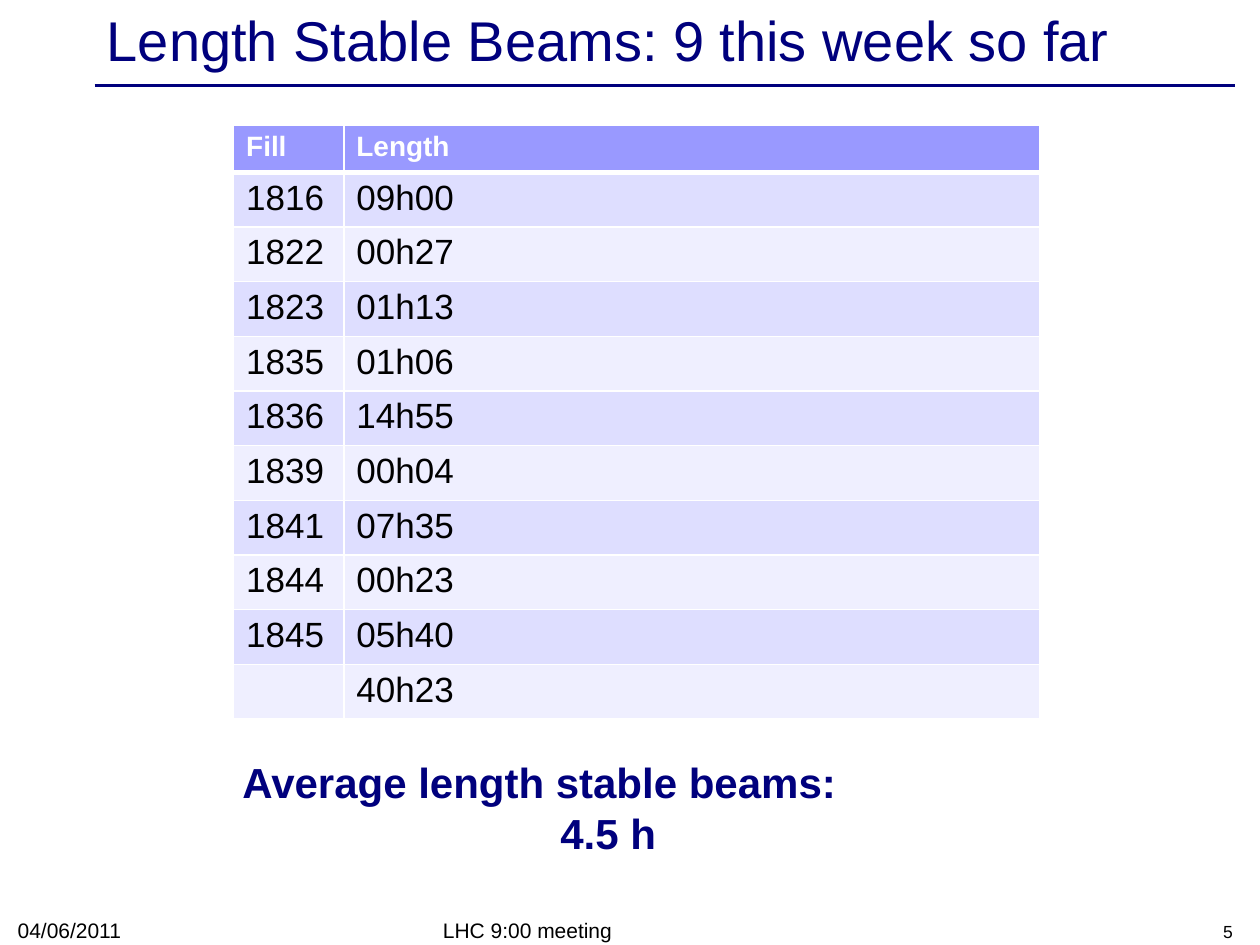
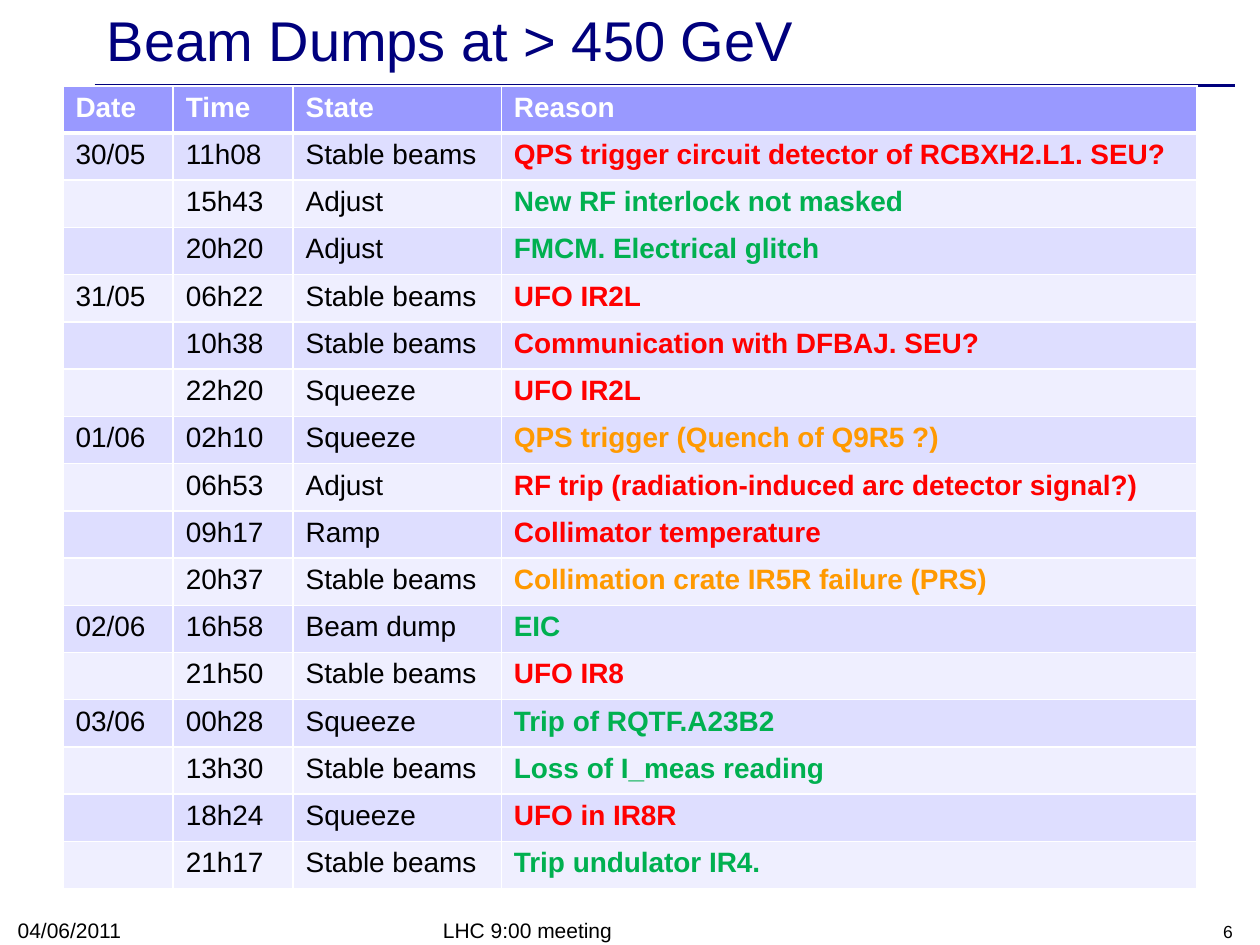
"""Build two slides on stable beam lengths and beam dumps."""
from dataclasses import dataclass

import lxml.etree
import pptx
import pptx.dml.color
import pptx.enum.shapes
import pptx.enum.text
import pptx.oxml.ns
import pptx.slide
import pptx.table
import pptx.text.text
import pptx.util

Pt = pptx.util.Pt
ALIGN = pptx.enum.text.PP_ALIGN
ANCHOR = pptx.enum.text.MSO_ANCHOR
qn = pptx.oxml.ns.qn

FONT = "Arial"
NAVY, WHITE, BLACK = "00007D", "FFFFFF", "000000"
HEADER_FILL, BAND_FILLS = "9999FF", ("DEDEFF", "EFEFFF")
RED, GREEN, ORANGE = "FF0000", "00B050", "FF9900"
ROW_HEIGHT = 27


@dataclass(frozen=True)
class Style:
    """Appearance of a run of text."""
    size: float
    color: str = BLACK
    bold: bool = False


@dataclass(frozen=True)
class Box:
    """Place of a text box and how its text sits in it."""
    left: float
    top: float
    width: float
    height: float
    style: Style
    anchor: ANCHOR = ANCHOR.BOTTOM
    align: ALIGN = ALIGN.LEFT


@dataclass(frozen=True)
class TableSpec:
    """Place, columns and body style of a table."""
    left: float
    top: float
    column_widths: tuple[float, ...]
    headings: tuple[str, ...]
    body_size: float


@dataclass(frozen=True)
class Dump:
    """One beam dump, coloured by the kind of its reason."""
    date: str
    time: str
    state: str
    reason: str
    color: str


TITLE = Box(54, 2, 648, 41, Style(32, NAVY), ANCHOR.MIDDLE)
MEETING = Box(246, 522, 228, 20, Style(12))
DATE = Box(3, 521.5, 168, 20.5, Style(12))
NUMBER = Box(543.5, 522, 168, 20, Style(10), align=ALIGN.RIGHT)
AVERAGE = Box(131.5, 429, 432, 66, Style(24, NAVY, True), ANCHOR.TOP)

FILL_TABLE = TableSpec(133.5, 71.5, (63, 397.5), ("Fill", "Length"), 20)
DUMP_TABLE = TableSpec(36, 49, (63, 68.5, 119, 397.5), ("Date", "Time", "State", "Reason"), 16)

FILLS = [
    ("1816", "09h00"), ("1822", "00h27"), ("1823", "01h13"), ("1835", "01h06"),
    ("1836", "14h55"), ("1839", "00h04"), ("1841", "07h35"), ("1844", "00h23"),
    ("1845", "05h40"), ("", "40h23"),
]

DUMPS = [
    Dump("30/05", "11h08", "Stable beams", "QPS trigger circuit detector of RCBXH2.L1. SEU?", RED),
    Dump("", "15h43", "Adjust", "New RF interlock not masked", GREEN),
    Dump("", "20h20", "Adjust", "FMCM. Electrical glitch", GREEN),
    Dump("31/05", "06h22", "Stable beams", "UFO IR2L", RED),
    Dump("", "10h38", "Stable beams", "Communication with DFBAJ. SEU?", RED),
    Dump("", "22h20", "Squeeze", "UFO IR2L", RED),
    Dump("01/06", "02h10", "Squeeze", "QPS trigger (Quench of Q9R5 ?)", ORANGE),
    Dump("", "06h53", "Adjust", "RF trip (radiation-induced arc detector signal?)", RED),
    Dump("", "09h17", "Ramp", "Collimator temperature", RED),
    Dump("", "20h37", "Stable beams", "Collimation crate IR5R failure (PRS)", ORANGE),
    Dump("02/06", "16h58", "Beam dump", "EIC", GREEN),
    Dump("", "21h50", "Stable beams", "UFO IR8", RED),
    Dump("03/06", "00h28", "Squeeze", "Trip of RQTF.A23B2", GREEN),
    Dump("", "13h30", "Stable beams", "Loss of I_meas reading", GREEN),
    Dump("", "18h24", "Squeeze", "UFO in IR8R", RED),
    Dump("", "21h17", "Stable beams", "Trip undulator IR4.", GREEN),
]


def rgb(color: str) -> pptx.dml.color.RGBColor:
    """Turn a hex string into a colour."""
    return pptx.dml.color.RGBColor.from_string(color)


def add_run(paragraph: pptx.text.text._Paragraph, text: str, style: Style) -> None:
    """Add one styled run to a paragraph."""
    run = paragraph.add_run()
    run.text = text
    run.font.name = FONT
    run.font.size = Pt(style.size)
    run.font.bold = style.bold
    run.font.color.rgb = rgb(style.color)


def add_text(slide: pptx.slide.Slide, box: Box, text: str) -> pptx.text.text.TextFrame:
    """Add a text box with one paragraph."""
    shape = slide.shapes.add_textbox(Pt(box.left), Pt(box.top), Pt(box.width), Pt(box.height))
    frame = shape.text_frame
    frame.word_wrap = True
    frame.vertical_anchor = box.anchor
    frame.paragraphs[0].alignment = box.align
    add_run(frame.paragraphs[0], text, box.style)
    return frame


def add_slide(presentation: pptx.presentation.Presentation, title: str,
              number: int) -> pptx.slide.Slide:
    """Add a slide with title, rule and footers."""
    slide = presentation.slides.add_slide(presentation.slide_layouts[6])
    rule = slide.shapes.add_connector(
        pptx.enum.shapes.MSO_CONNECTOR.STRAIGHT, Pt(54), Pt(49), Pt(705.5), Pt(49))
    rule.line.color.rgb = rgb(NAVY)
    rule.line.width = Pt(2)
    lxml.etree.SubElement(rule._element.spPr, qn("a:effectLst"))
    for box, text in ((TITLE, title), (MEETING, "LHC 9:00 meeting"),
                      (DATE, "04/06/2011"), (NUMBER, str(number))):
        add_text(slide, box, text)
    return slide


def set_borders(cell: pptx.table._Cell, top: float, bottom: float) -> None:
    """Give a cell white borders."""
    properties = cell._tc.get_or_add_tcPr()
    for side, width in (("L", 1), ("R", 1), ("T", top), ("B", bottom)):
        line = lxml.etree.SubElement(properties, qn(f"a:ln{side}"), w=str(Pt(width)))
        fill = lxml.etree.SubElement(line, qn("a:solidFill"))
        lxml.etree.SubElement(fill, qn("a:srgbClr"), val=WHITE)


def fill_cell(cell: pptx.table._Cell, row: int, text: str, style: Style) -> None:
    """Write one cell, with the fill and borders of its row."""
    set_borders(cell, 3 if row == 1 else 1, 3 if row == 0 else 1)
    cell.fill.solid()
    cell.fill.fore_color.rgb = rgb(BAND_FILLS[(row - 1) % 2] if row else HEADER_FILL)
    paragraph = cell.text_frame.paragraphs[0]
    if text:
        add_run(paragraph, text, style)
    else:
        lxml.etree.SubElement(paragraph._p, qn("a:endParaRPr"), sz=str(round(style.size * 100)))


def add_table(slide: pptx.slide.Slide, spec: TableSpec, rows: list[tuple[str, ...]],
              last_column_colors: list[str] | None = None) -> None:
    """Add a banded table, its last column bold where colours are given."""
    row_count = len(rows) + 1
    table = slide.shapes.add_table(
        row_count, len(spec.headings), Pt(spec.left), Pt(spec.top),
        Pt(sum(spec.column_widths)), Pt(ROW_HEIGHT * row_count)).table
    for column, width in zip(table.columns, spec.column_widths):
        column.width = Pt(width)
    for row_index, texts in enumerate([spec.headings, *rows]):
        table.rows[row_index].height = Pt(ROW_HEIGHT)
        style = Style(spec.body_size) if row_index else Style(16, WHITE, True)
        styles = [style] * len(texts)
        if row_index and last_column_colors:
            styles[-1] = Style(spec.body_size, last_column_colors[row_index - 1], True)
        for column_index, (text, cell_style) in enumerate(zip(texts, styles)):
            fill_cell(table.cell(row_index, column_index), row_index, text, cell_style)


def main() -> None:
    """Build and save the presentation."""
    presentation = pptx.Presentation()
    presentation.slide_width, presentation.slide_height = Pt(720), Pt(540)

    slide = add_slide(presentation, "Length Stable Beams: 9 this week so far", 5)
    add_table(slide, FILL_TABLE, FILLS)
    frame = add_text(slide, AVERAGE, "Average length stable beams:")
    paragraph = frame.add_paragraph()
    paragraph.alignment = ALIGN.CENTER
    add_run(paragraph, "4.5 h", AVERAGE.style)

    slide = add_slide(presentation, "Beam Dumps at > 450 GeV", 6)
    add_table(slide, DUMP_TABLE,
              [(dump.date, dump.time, dump.state, dump.reason) for dump in DUMPS],
              [dump.color for dump in DUMPS])
    presentation.save("out.pptx")


if __name__ == "__main__":
    main()
